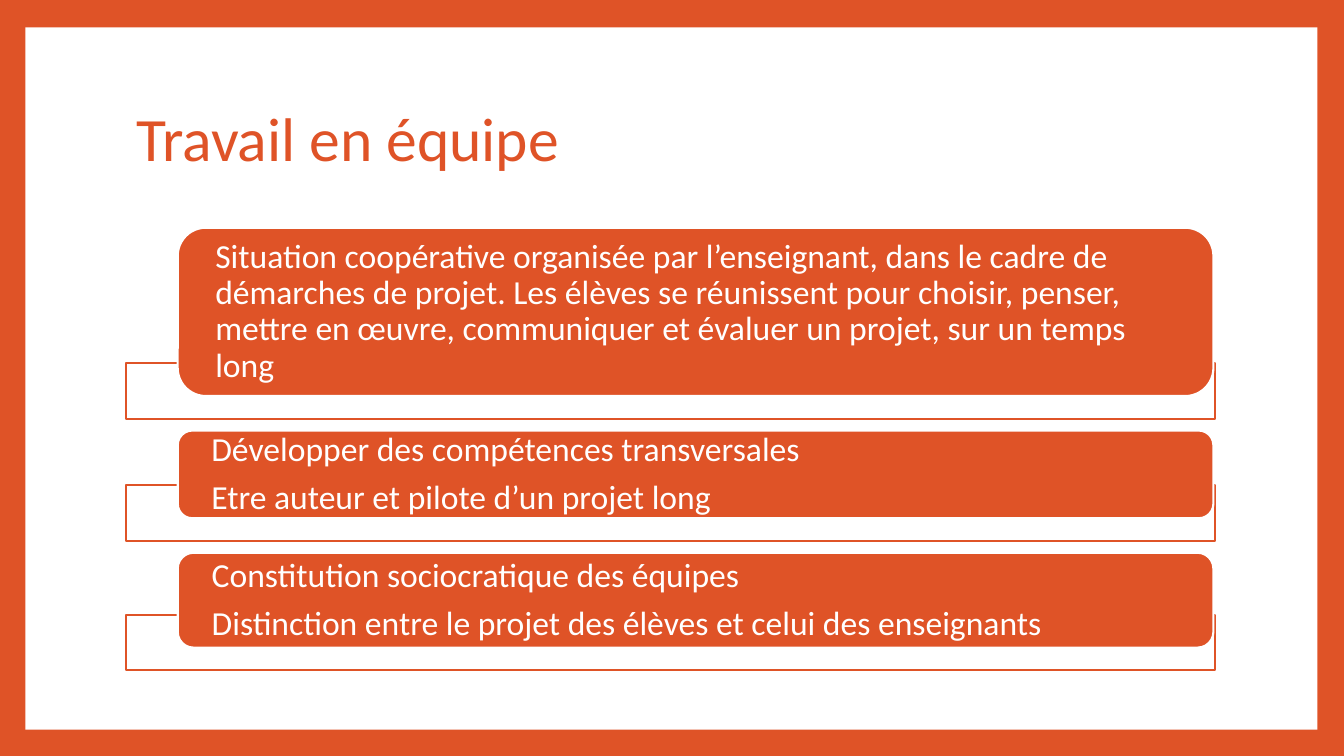
from pptx import Presentation
from pptx.dml.color import RGBColor
from pptx.enum.shapes import MSO_SHAPE
from pptx.enum.text import MSO_ANCHOR, PP_ALIGN
from pptx.util import Cm, Pt

RECT, ROUND = MSO_SHAPE.RECTANGLE, MSO_SHAPE.ROUNDED_RECTANGLE
MIDDLE, LEFT = MSO_ANCHOR.MIDDLE, PP_ALIGN.LEFT

# Content: each tab has a height in cm and its lines
TITLE = "Travail en équipe"
TABS = [
    (4.24, ["Situation coopérative organisée par l’enseignant, dans le cadre de "
            "démarches de projet. Les élèves se réunissent pour choisir, penser, "
            "mettre en œuvre, communiquer et évaluer un projet, sur un temps long"]),
    (2.21, ["Développer des compétences transversales",
            "Etre auteur et pilote d’un projet long"]),
    (2.39, ["Constitution sociocratique des équipes",
            "Distinction entre le projet des élèves et celui des enseignants"]),
]

THEME = {
    "font": "Calibri",
    "orange": RGBColor.from_string("DF5327"),
    "white": RGBColor.from_string("FFFFFF"),
    "title": Pt(44),
    "body": Pt(24),
    "line": Pt(1.5),
}

# Layout in cm
WIDE, HIGH = 33.87, 19.05
PANEL = (0.64, 0.69, 32.56, 17.7)
HEAD = (3.18, 1.7, 27.43, 3.76)
TRAY_X, TRAY_W, TRAY_H = 3.18, 27.43, 1.4
TAB_X, TAB_W, TOP = 4.48, 26.1, 5.74
LAP, GAP, INSET = 0.83, 0.3, 0.74

FRAME = {"word_wrap": True, "vertical_anchor": MIDDLE}
TAB_FRAME = {**FRAME, "margin_left": Cm(INSET), "margin_right": Cm(INSET),
             "margin_top": 0, "margin_bottom": 0}
PARA = {"alignment": LEFT, "line_spacing": 0.9}
TAB_PARA = {**PARA, "space_after": Pt(8.4)}


def apply(target, values):
    for name, value in values.items():
        setattr(target, name, value)


def add_box(slide, kind, box, fill, line=None):
    shape = slide.shapes.add_shape(kind, *map(Cm, box))
    shape.shadow.inherit = False
    shape.fill.solid()
    shape.fill.fore_color.rgb = THEME[fill]
    if line:
        shape.line.color.rgb = THEME[line]
        shape.line.width = THEME["line"]
    else:
        shape.line.fill.background()
    return shape


def write(shape, lines, size, color, frame, para):
    text = shape.text_frame
    apply(text, frame)
    for i, line in enumerate(lines):
        part = text.add_paragraph() if i else text.paragraphs[0]
        apply(part, para)
        run = part.add_run()
        run.text = line
        apply(run.font, {"name": THEME["font"], "size": THEME[size]})
        run.font.color.rgb = THEME[color]


def main():
    deck = Presentation()
    deck.slide_width, deck.slide_height = Cm(WIDE), Cm(HIGH)
    slide = deck.slides.add_slide(deck.slide_layouts[6])

    # Orange border around a white panel
    back = slide.background.fill
    back.solid()
    back.fore_color.rgb = THEME["orange"]
    add_box(slide, RECT, PANEL, "white")

    # Title
    head = slide.shapes.add_textbox(*map(Cm, HEAD))
    write(head, [TITLE], "title", "orange", FRAME, PARA)

    # Each tab overlaps the tray below it
    top = TOP
    for high, lines in TABS:
        tray = top + high - LAP
        add_box(slide, RECT, (TRAY_X, tray, TRAY_W, TRAY_H), "white", "orange")
        tab = add_box(slide, ROUND, (TAB_X, top, TAB_W, high), "orange", "white")
        write(tab, lines, "body", "white", TAB_FRAME, TAB_PARA)
        top = tray + TRAY_H + GAP

    deck.save("out.pptx")


if __name__ == "__main__":
    main()
